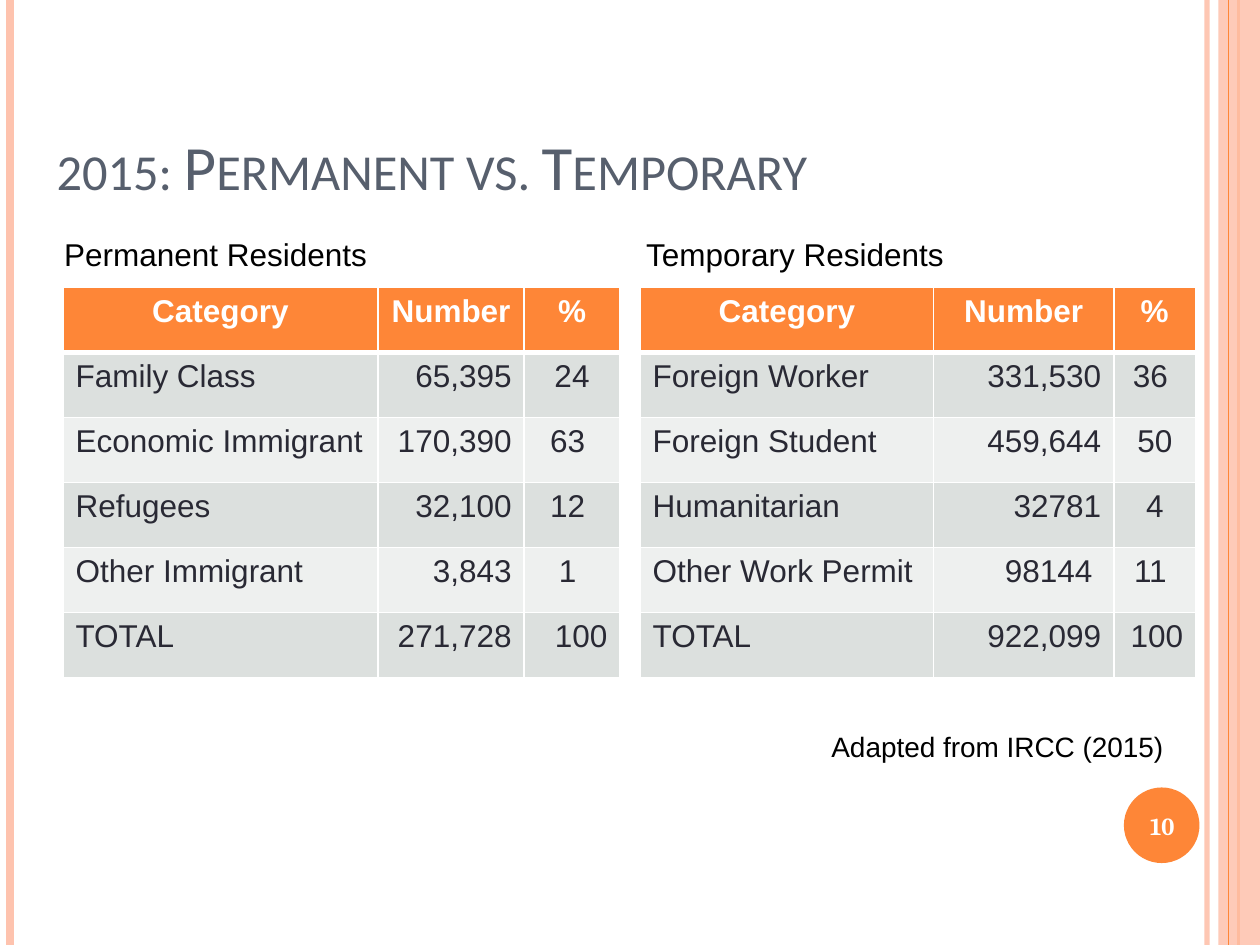
"""Builds a slide that sets two tables of residents side by side."""
from dataclasses import dataclass

from lxml.etree import SubElement as Sub
from pptx import Presentation as Deck
from pptx.dml.color import RGBColor as Rgb
from pptx.enum.shapes import MSO_CONNECTOR as Link, MSO_SHAPE as Kind
from pptx.enum.text import MSO_ANCHOR as Anchor, PP_ALIGN as Align
from pptx.oxml.ns import qn
from pptx.util import Emu, Inches, Pt


@dataclass(frozen=True)
class Theme:
    """Holds the colours, fonts and type sizes."""
    main: str = "FE8637"
    pale: str = "FEC3AE"
    slate: str = "575F6D"
    ink: str = "292934"
    black: str = "000000"
    white: str = "FFFFFF"
    bands: tuple = ("DCE0DE", "EEF0EF")
    sans: str = "Arial"
    head: str = "Calibri"
    serif: str = "Cambria"
    large: int = 36
    body: int = 18
    note: int = 16
    page: int = 14


def write(frame, text, font, size, color, bold=False, align=Align.LEFT,
          anchor=Anchor.TOP, caps=False, tab=None):
    """Writes one styled paragraph into a text frame."""
    frame.word_wrap = True
    frame.vertical_anchor = anchor
    para = frame.paragraphs[0]
    para.alignment = align
    if tab is not None:
        stops = Sub(para._p.get_or_add_pPr(), qn("a:tabLst"))
        Sub(stops, qn("a:tab"), pos=str(int(tab)), algn="l")
    run = para.add_run()
    run.text = text
    run.font.name, run.font.size, run.font.bold = font, Pt(size), bold
    run.font.color.rgb = Rgb.from_string(color)
    if caps:
        run.font._element.set("cap", "small")


def fade(fill, share):
    """Sets the opacity of a solid fill in percent."""
    tone = fill._xPr.find(qn("a:solidFill"))[0]
    Sub(tone, qn("a:alpha"), val=str(share * 1000))


def edge(cell, side, width, color):
    """Draws one border of a table cell."""
    line = Sub(cell._tc.get_or_add_tcPr(), qn(f"a:ln{side}"), w=str(Pt(width)))
    Sub(Sub(line, qn("a:solidFill")), qn("a:srgbClr"), val=color)


class Page:
    """Draws on a slide with a grid of 100 columns and 75 rows."""

    def __init__(self, theme):
        """Starts a deck with one titled slide."""
        self.theme = theme
        self.deck = Deck()
        self.deck.slide_width, self.deck.slide_height = Inches(10), Inches(7.5)
        self.slide = self.deck.slides.add_slide(self.deck.slide_layouts[5])
        self.shapes = self.slide.shapes

    def grid(self, *units):
        """Turns grid units into lengths."""
        return [Emu(int(self.deck.slide_width * unit / 100)) for unit in units]

    def rule(self, col, width, color, share=100):
        """Draws a line down the full height."""
        left, top, foot = self.grid(col, 0, 75)
        line = self.shapes.add_connector(Link.STRAIGHT, left, top, left, foot)
        line.line.width = Pt(width)
        line.line.color.rgb = Rgb.from_string(color)
        if share < 100:
            fade(line.line.fill, share)
        Sub(line._element.spPr, qn("a:effectLst"))

    def shape(self, kind, box, color, share=100):
        """Draws a plain filled shape."""
        item = self.shapes.add_shape(kind, *self.grid(*box))
        item.shadow.inherit = False
        item.fill.solid()
        item.fill.fore_color.rgb = Rgb.from_string(color)
        item.line.fill.background()
        if share < 100:
            fade(item.fill, share)

    def title(self, box, text):
        """Moves and fills the title."""
        item = self.shapes.title
        item.left, item.top, item.width, item.height = self.grid(*box)
        look = self.theme
        write(item.text_frame, text, look.head, look.large, look.slate,
              anchor=Anchor.BOTTOM, caps=True)

    def text(self, box, text, **style):
        """Adds a text box."""
        look = self.theme
        item = self.shapes.add_textbox(*self.grid(*box))
        write(item.text_frame, text,
              **{"font": look.sans, "color": look.black, **style})

    def table(self, left, cols, rows):
        """Adds a banded table below a bold head row."""
        look = self.theme
        box = self.grid(left, 22.8, sum(cols), 31)
        table = self.shapes.add_table(len(rows), len(cols), *box).table
        for part, width in zip(table.columns, self.grid(*cols)):
            part.width = width
        for r, row in enumerate(rows):
            for c, text in enumerate(row):
                self.cell(table.cell(r, c), r, c, text, r == len(rows) - 1)

    def cell(self, cell, row, col, text, last):
        """Fills and frames one table cell."""
        look, head = self.theme, row == 0
        for side, width in zip("LRTB", (1, 1, 3 if row == 1 else 1, 3 if head else 1)):
            edge(cell, side, width, look.white)
        cell.fill.solid()
        tone = look.main if head else look.bands[(row - 1) % 2]
        cell.fill.fore_color.rgb = Rgb.from_string(tone)
        aligns = (Align.LEFT, Align.RIGHT, Align.RIGHT if last else Align.CENTER)
        write(cell.text_frame, text, look.sans, look.body,
              look.white if head else look.ink, bold=head,
              align=Align.CENTER if head else aligns[col])


HEAD = ("Category", "Number", "%")
STAY = (HEAD, ("Family Class", "65,395", "24"),
        ("Economic Immigrant", "170,390", "63 "),
        ("Refugees", "32,100", "12 "),
        ("Other Immigrant", "3,843", "1 "),
        ("TOTAL", "271,728", "100"))
VISIT = (HEAD, ("Foreign Worker", "331,530", "36 "),
         ("Foreign Student", "459,644", "50"),
         ("Humanitarian", "32781", "4"),
         ("Other Work Permit", "98144 ", "11 "),
         ("TOTAL", "922,099", "100"))


def main():
    """Builds and saves the slide."""
    look = Theme()
    page = Page(look)
    page.rule(95.8, 3, look.pale, 93)
    page.rule(0.8, 4.5, look.pale)
    page.rule(98.3, 1.5, look.main)
    page.shape(Kind.RECTANGLE, (96.7, 0, 3.3, 75), look.pale, 87)
    page.rule(97.5, 0.75, look.main)
    page.shape(Kind.OVAL, (89.2, 62.5, 6, 6), look.main)
    page.title((3.5, 5.8, 93.1, 10.8), "2015: Permanent vs. Temporary")
    page.table(5, (25, 11.6, 7.6), STAY)
    page.table(50.8, (23.3, 14.3, 6.5), VISIT)
    page.text((4.1, 18.2, 89.1, 4), "Permanent Residents\tTemporary Residents",
              size=look.body, tab=page.grid(46.2)[0])
    page.text((65, 57.4, 31.8, 3.7), "Adapted from IRCC (2015)", size=look.note)
    page.text((88.9, 62.7, 6.7, 5.7), "10", font=look.serif, size=look.page,
              color=look.white, bold=True, align=Align.CENTER,
              anchor=Anchor.MIDDLE)
    page.deck.save("out.pptx")


if __name__ == "__main__":
    main()
